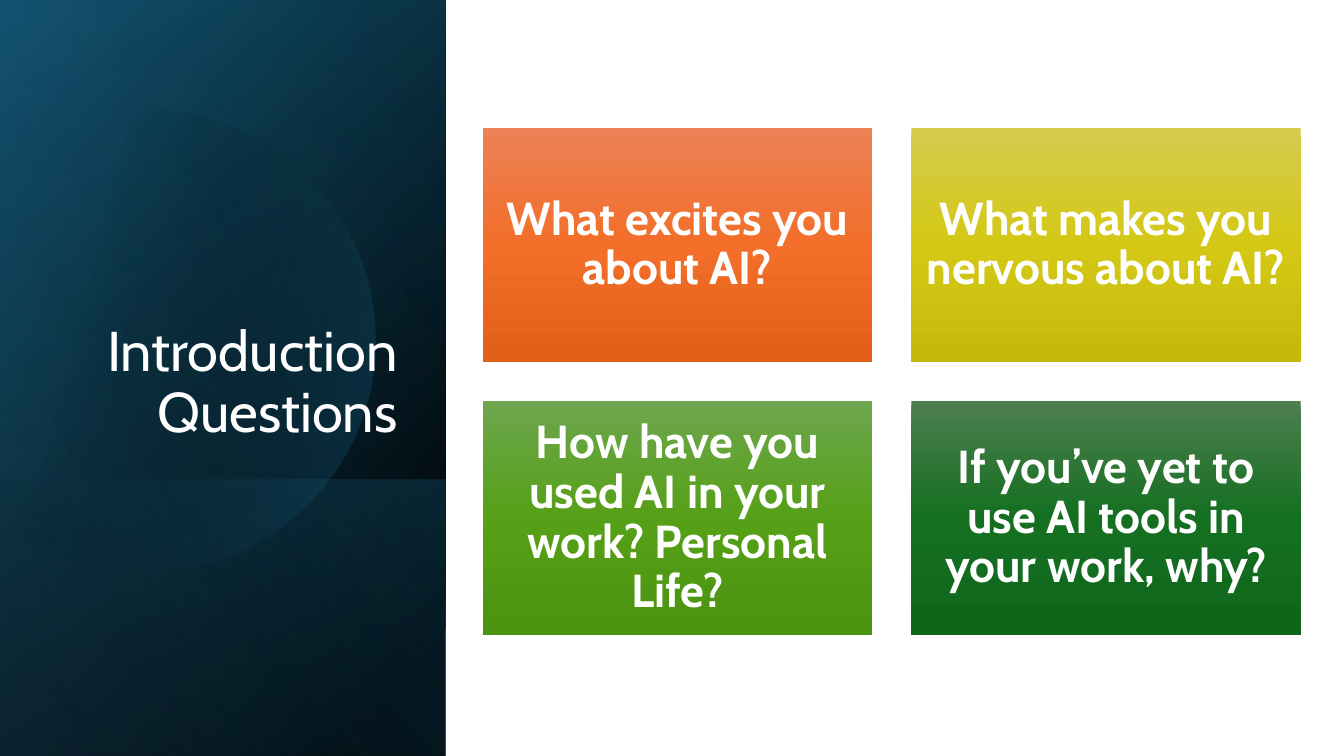
from dataclasses import dataclass
from itertools import pairwise
from math import cos, radians, sin, tan

from pptx import Presentation
from pptx.dml.color import RGBColor
from pptx.enum.shapes import MSO_SHAPE as Preset
from pptx.enum.text import MSO_ANCHOR as Anchor, MSO_AUTO_SIZE as AutoSize, PP_ALIGN as Align
from pptx.oxml import parse_xml
from pptx.oxml.ns import nsdecls, qn
from pptx.shapes.autoshape import Shape
from pptx.slide import Slide
from pptx.text.text import TextFrame
from pptx.util import Inches, Pt

FONT = "Cabin"
COLORS = {
    "white": "FFFFFF", "black": "000000", "navy": "104862", "teal": "156082", "sky": "46B1E1",
    "orange light": "ED8257", "orange": "F26E29", "orange dark": "E25F1A",
    "yellow light": "D5CB4E", "yellow": "D4C815", "yellow dark": "C4B90B",
    "lime light": "6DA64E", "lime": "56A017", "lime dark": "4C930F",
    "green light": "4D7E50", "green": "156F21", "green dark": "0F661B",
}


@dataclass(frozen=True)
class Stop:
    """A gradient stop; position and opacity are percentages."""
    position: int
    color: str
    opacity: int = 100


@dataclass(frozen=True)
class Panel:
    """A layer of the dark sidebar, turned a quarter and mirrored."""
    left: float
    top: float
    width: float
    height: float
    angle: int
    stops: tuple[Stop, ...]


@dataclass(frozen=True)
class Card:
    """A question and the colour family of its card."""
    question: str
    color: str


BASE_PANELS = (
    Panel(-1.54, 1.54, 7.5, 4.42, 50, (Stop(8, "black"), Stop(100, "navy"))),
    Panel(-1.54, 1.55, 7.5, 4.42, 30, (Stop(0, "black", 0), Stop(99, "teal", 46))),
    Panel(0.84, 3.92, 2.74, 4.42, 130, (Stop(2, "teal", 29), Stop(100, "black", 30))),
)
SHEEN_PANEL = Panel(-1.54, 1.54, 7.5, 4.42, 120, (Stop(0, "black", 0), Stop(99, "sky", 11)))
DISC_STOPS = (Stop(29, "black", 0), Stop(100, "teal", 43))
DISC_X, DISC_Y, DISC_RADIUS = 1.43, 3.38, 2.29
DISC_ANGLES = (-134, -90, 0, 90, 134)
CARDS = (
    Card("What excites you about AI?", "orange"),
    Card("What makes you nervous about AI?", "yellow"),
    Card("How have you used AI in your work? Personal Life?", "lime"),
    Card("If you’ve yet to use AI tools in your work, why?", "green"),
)
CARD_LEFT, CARD_TOP, CARD_WIDTH, CARD_HEIGHT = 4.79, 1.27, 3.86, 2.32
COLUMN_STEP, ROW_STEP = 4.25, 2.71


def paint_gradient(shape: Shape, stops: tuple[Stop, ...], angle: int) -> None:
    """Give a shape a linear gradient with no outline or shadow."""
    shape.shadow.inherit = False
    shape.line.fill.background()
    shape.fill.background()
    stop_list = "".join(
        f'<a:gs pos="{stop.position * 1000}"><a:srgbClr val="{COLORS[stop.color]}">'
        f'<a:alpha val="{stop.opacity * 1000}"/></a:srgbClr></a:gs>'
        for stop in stops
    )
    gradient = parse_xml(
        f'<a:gradFill {nsdecls("a")} rotWithShape="1"><a:gsLst>{stop_list}</a:gsLst>'
        f'<a:lin ang="{angle * 60000}" scaled="0"/></a:gradFill>'
    )
    properties = shape.element.spPr
    properties.replace(properties.find(qn("a:noFill")), gradient)


def write_text(frame: TextFrame, text: str, size: int, bold: bool, alignment: Align, anchor: Anchor) -> None:
    """Write one white paragraph into a wrapping frame."""
    frame.word_wrap = True
    frame.auto_size = AutoSize.NONE
    frame.vertical_anchor = anchor
    paragraph = frame.paragraphs[0]
    paragraph.alignment = alignment
    paragraph.line_spacing = 0.9
    run = paragraph.add_run()
    run.text = text
    run.font.name = FONT
    run.font.size = Pt(size)
    run.font.bold = bold
    run.font.color.rgb = RGBColor.from_string(COLORS["white"])


def add_rectangle(slide: Slide, left: float, top: float, width: float, height: float) -> Shape:
    """Add a plain rectangle measured in inches."""
    return slide.shapes.add_shape(Preset.RECTANGLE, Inches(left), Inches(top), Inches(width), Inches(height))


def add_panel(slide: Slide, panel: Panel) -> None:
    """Draw one sidebar layer."""
    shape = add_rectangle(slide, panel.left, panel.top, panel.width, panel.height)
    shape.rotation = 90
    shape.element.spPr.find(qn("a:xfrm")).set("flipH", "1")
    paint_gradient(shape, panel.stops, panel.angle)


def disc_point(angle: float, handle: float = 0) -> tuple[int, int]:
    """Return a rim point, moved along its tangent by a share of the radius."""
    turn = radians(angle)
    return (
        Inches(DISC_X + DISC_RADIUS * (cos(turn) - handle * sin(turn))),
        Inches(DISC_Y + DISC_RADIUS * (sin(turn) + handle * cos(turn))),
    )


def add_disc(slide: Slide) -> None:
    """Draw the faint disc, cut straight at its left side."""
    anchors = [disc_point(angle) for angle in DISC_ANGLES]
    builder = slide.shapes.build_freeform(*anchors[0])
    builder.add_line_segments(anchors[1:], close=True)
    shape = builder.convert_to_shape()
    segments = list(shape.element.spPr.iter(qn("a:lnTo")))
    for segment, (start, end) in zip(segments, pairwise(DISC_ANGLES)):
        handle = 4 / 3 * tan(radians(end - start) / 4)
        curve = (disc_point(start, handle), disc_point(end, -handle), disc_point(end))
        points = "".join(f'<a:pt x="{x - shape.left}" y="{y - shape.top}"/>' for x, y in curve)
        bezier = parse_xml(f'<a:cubicBezTo {nsdecls("a")}>{points}</a:cubicBezTo>')
        segment.getparent().replace(segment, bezier)
    paint_gradient(shape, DISC_STOPS, 14)


def add_title(slide: Slide) -> None:
    """Place the title above the sidebar layers."""
    title = slide.shapes.title
    title.left, title.top, title.width, title.height = (Inches(value) for value in (0.64, 1.84, 3.4, 2.62))
    write_text(title.text_frame, "Introduction Questions", 40, False, Align.RIGHT, Anchor.BOTTOM)
    title.element.getparent().append(title.element)


def add_card(slide: Slide, card: Card, row: int, column: int) -> None:
    """Draw one question card in the grid."""
    shape = add_rectangle(
        slide, CARD_LEFT + column * COLUMN_STEP, CARD_TOP + row * ROW_STEP, CARD_WIDTH, CARD_HEIGHT
    )
    stops = (Stop(0, f"{card.color} light"), Stop(50, card.color), Stop(100, f"{card.color} dark"))
    paint_gradient(shape, stops, 90)
    frame = shape.text_frame
    frame.margin_left = frame.margin_right = frame.margin_top = frame.margin_bottom = Inches(0.14)
    write_text(frame, card.question, 33, True, Align.CENTER, Anchor.MIDDLE)


def main() -> None:
    """Build and save the slide."""
    presentation = Presentation()
    presentation.slide_width, presentation.slide_height = Inches(13.33), Inches(7.5)
    slide = presentation.slides.add_slide(presentation.slide_layouts[5])
    for panel in BASE_PANELS:
        add_panel(slide, panel)
    add_disc(slide)
    add_panel(slide, SHEEN_PANEL)
    add_title(slide)
    for index, card in enumerate(CARDS):
        add_card(slide, card, *divmod(index, 2))
    presentation.save("out.pptx")


if __name__ == "__main__":
    main()
